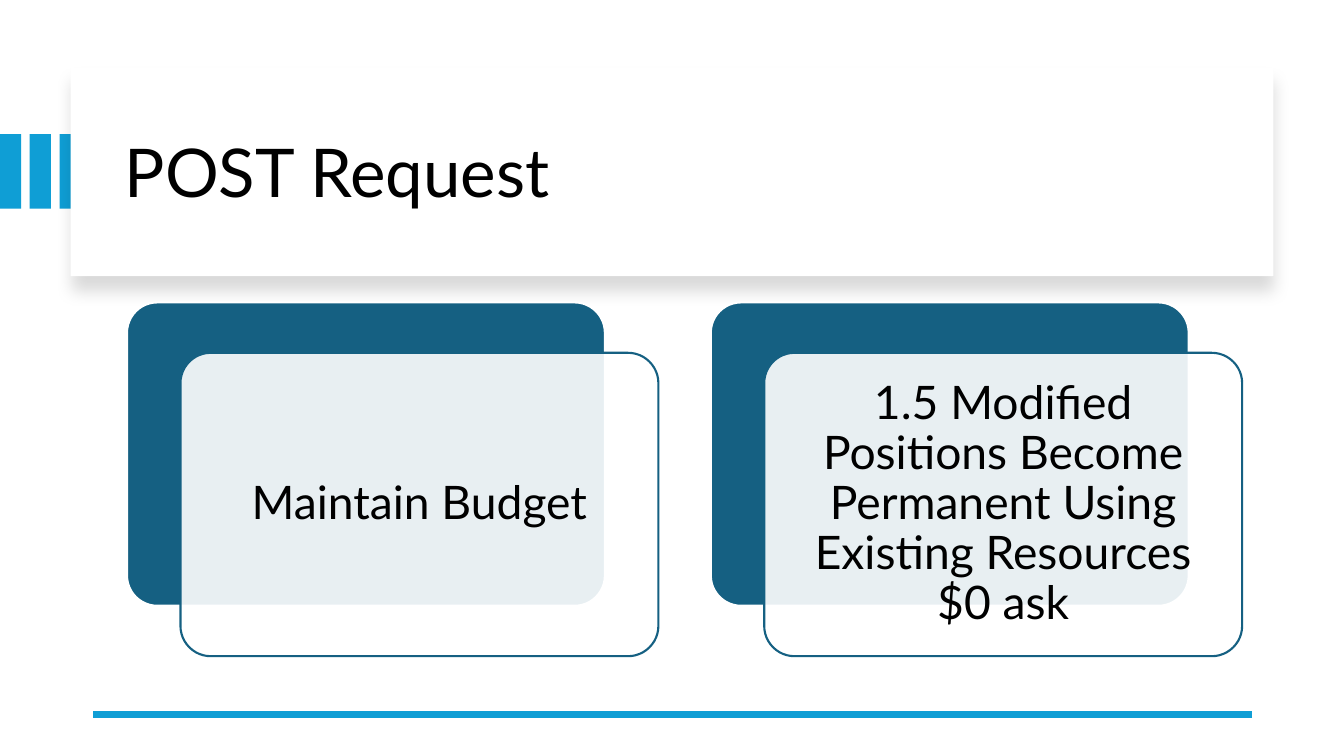
from lxml import etree
from pptx import Presentation
from pptx.dml.color import RGBColor
from pptx.enum import shapes, text
from pptx.oxml import parse_xml
from pptx.oxml.ns import nsdecls, qn
from pptx.util import Inches, Pt

COLORS = {"accent": "0F9ED5", "card": "156082", "paper": "FFFFFF", "ink": "000000"}
FONT = "Lato"
REQUESTS = [
    "Maintain Budget",
    "1.5 Modified Positions Become Permanent Using Existing Resources $0 ask",
]


def rgb(name):
    return RGBColor.from_string(COLORS[name])


def add_block(slide, kind, left, top, width, height, fill, line=None):
    block = slide.shapes.add_shape(
        kind, Inches(left), Inches(top), Inches(width), Inches(height))
    block.shadow.inherit = False
    block.fill.solid()
    block.fill.fore_color.rgb = rgb(fill)
    if line:
        block.line.color.rgb = rgb(line)
        block.line.width = Pt(1.5)
    else:
        block.line.fill.background()
    return block


def write(frame, wording, size, align):
    frame.word_wrap = True
    frame.vertical_anchor = text.MSO_ANCHOR.MIDDLE
    paragraph = frame.paragraphs[0]
    paragraph.text = wording
    paragraph.alignment = align
    paragraph.line_spacing = 0.9
    paragraph.font.name = FONT
    paragraph.font.size = Pt(size)
    paragraph.font.color.rgb = rgb("ink")


def add_stripes(slide):
    for i in range(3):
        add_block(slide, shapes.MSO_SHAPE.RECTANGLE,
                  0.295 * i, 1.33, 0.21, 0.74, "accent")


def add_title(slide, wording):
    panel = add_block(slide, shapes.MSO_SHAPE.RECTANGLE,
                      0.7, 0.67, 11.93, 2.07, "paper")
    effects = panel._element.spPr.find(qn("a:effectLst"))
    effects.append(parse_xml(
        f'<a:outerShdw {nsdecls("a")} blurRad="{Pt(11)}" dist="{Pt(10)}" '
        f'dir="5400000" algn="t" rotWithShape="0"><a:srgbClr val="{COLORS["ink"]}">'
        '<a:alpha val="15000"/></a:srgbClr></a:outerShdw>'))
    title = slide.shapes.add_textbox(
        Inches(1.14), Inches(0.89), Inches(11.13), Inches(1.7))
    write(title.text_frame, wording, 48, text.PP_ALIGN.LEFT)


def add_rule(slide):
    rule = slide.shapes.add_connector(
        shapes.MSO_CONNECTOR.STRAIGHT,
        Inches(12.42), Inches(7.09), Inches(0.92), Inches(7.09))
    rule.line.color.rgb = rgb("accent")
    rule.line.width = Pt(4.5)
    etree.SubElement(rule._element.spPr, qn("a:effectLst"))


def add_request(slide, left, wording):
    """Draw a solid card with a translucent, captioned card offset over it."""
    rounded = shapes.MSO_SHAPE.ROUNDED_RECTANGLE
    back = add_block(slide, rounded, left, 3, 4.74, 3.01, "card", "paper")
    front = add_block(slide, rounded, left + 0.53, 3.5, 4.74, 3.01, "paper", "card")
    for card in (back, front):
        card.adjustments[0] = 0.1
    fill_color = front._element.spPr.find(qn("a:solidFill")).find(qn("a:srgbClr"))
    etree.SubElement(fill_color, qn("a:alpha"), val="90000")
    frame = front.text_frame
    frame.margin_left = frame.margin_right = Inches(0.14)
    frame.margin_top = frame.margin_bottom = Inches(0.14)
    write(frame, wording, 33, text.PP_ALIGN.CENTER)


def main():
    deck = Presentation()
    deck.slide_width, deck.slide_height = Inches(13.33), Inches(7.5)
    slide = deck.slides.add_slide(deck.slide_layouts[6])
    add_stripes(slide)
    add_title(slide, "POST Request")
    add_rule(slide)
    for i, wording in enumerate(REQUESTS):
        add_request(slide, 1.26 + 5.79 * i, wording)
    deck.save("out.pptx")


if __name__ == "__main__":
    main()
